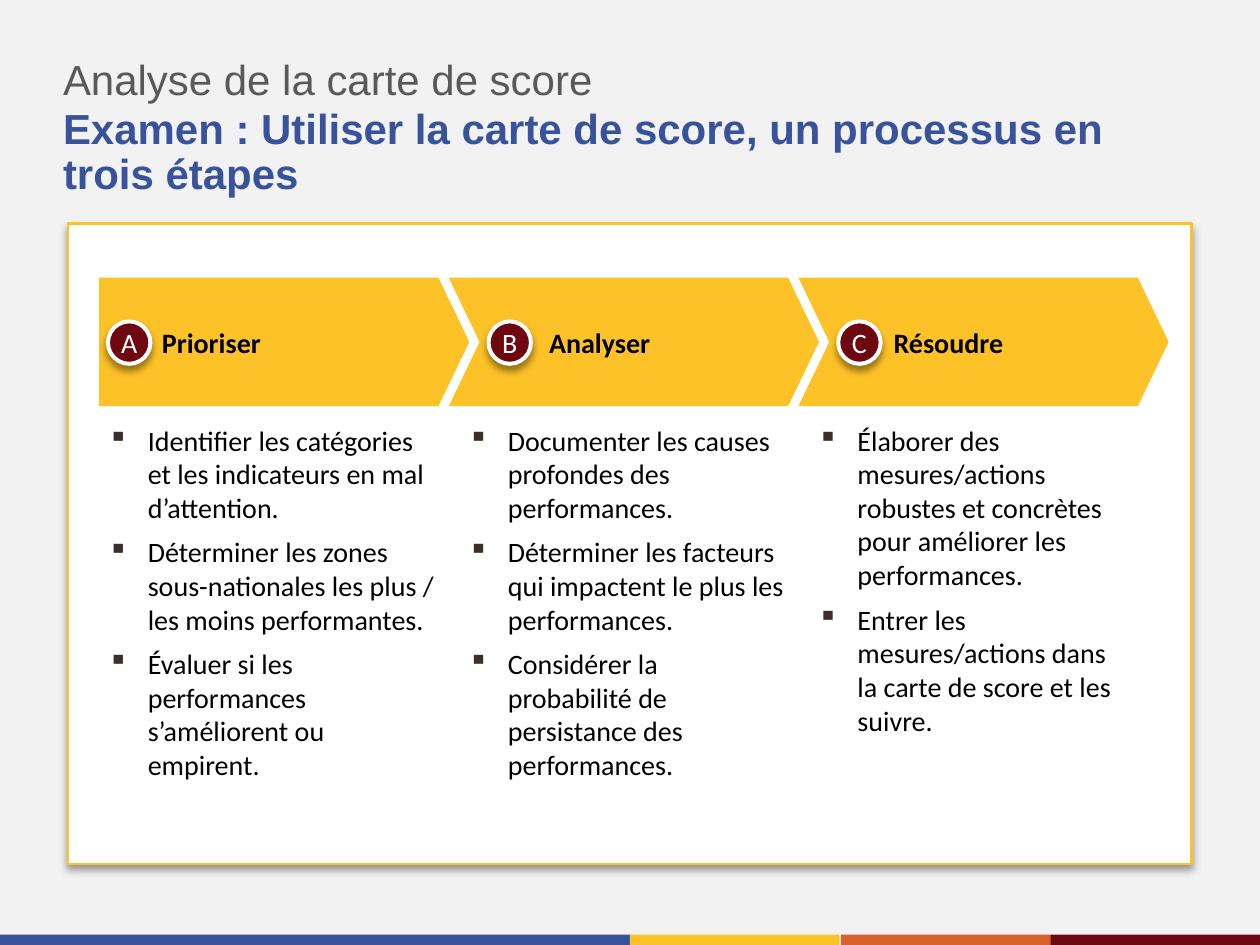
from lxml import etree
from pptx import Presentation
from pptx.dml.color import RGBColor
from pptx.enum.shapes import MSO_SHAPE
from pptx.enum.text import MSO_ANCHOR, PP_ALIGN
from pptx.oxml.ns import qn
from pptx.util import Inches, Pt

RECTANGLE = MSO_SHAPE.RECTANGLE
OVAL = MSO_SHAPE.OVAL
TOP = MSO_ANCHOR.TOP
MIDDLE = MSO_ANCHOR.MIDDLE
LEFT = PP_ALIGN.LEFT
CENTER = PP_ALIGN.CENTER

COLORS = {
    "background": "F2F2F2",
    "blue": "38529C",
    "yellow": "FDC228",
    "orange": "D8602C",
    "maroon": "6F0710",
    "gray": "595959",
    "bullet": "39302A",
    "white": "FFFFFF",
    "black": "000000",
}
HEADING = {"name": "Arial", "size": Pt(23.5)}
TITLE = {**HEADING, "bold": True}
BODY = {"name": "Calibri", "size": Pt(15.7)}
STEP_NAME = {**BODY, "bold": True}

FOOTER_BANDS = [
    ("blue", 0, 4.9),
    ("yellow", 4.9, 1.63),
    ("orange", 6.54, 1.63),
    ("maroon", 8.17, 1.63),
]
STEPS = [
    {
        "letter": "A", "name": "Prioriser", "notch": 0,
        "badge_left": 0.84, "name_left": 1.26, "name_width": 2.2,
        "tasks_left": 0.84, "tasks_width": 2.56,
        "tasks": [
            "Identifier les catégories et les indicateurs en mal d’attention.",
            "Déterminer les zones sous-nationales les plus / les moins performantes.",
            "Évaluer si les performances s’améliorent ou empirent.",
        ],
    },
    {
        "letter": "B", "name": "Analyser", "notch": 0.24,
        "badge_left": 3.8, "name_left": 4.27, "name_width": 1.88,
        "tasks_left": 3.64, "tasks_width": 2.48,
        "tasks": [
            "Documenter les causes profondes des performances.",
            "Déterminer les facteurs qui impactent le plus les performances.",
            "Considérer la probabilité de persistance des performances.",
        ],
    },
    {
        "letter": "C", "name": "Résoudre", "notch": 0.24,
        "badge_left": 6.52, "name_left": 6.95, "name_width": 1.88,
        "tasks_left": 6.36, "tasks_width": 2.44,
        "tasks": [
            "Élaborer des mesures/actions robustes et concrètes pour améliorer les performances.",
            "Entrer les mesures/actions dans la carte de score et les suivre.",
        ],
    },
]
ARROW_LEFT, ARROW_TOP, ARROW_STEP = 0.77, 2.16, 2.72
ARROW_WIDTH, ARROW_HEIGHT, ARROW_TIP = 2.88, 1, 0.24


def rgb(color):
    return RGBColor.from_string(COLORS[color])


def paint(shape, fill, line=None, line_width=0):
    shape.shadow.inherit = False
    shape.fill.solid()
    shape.fill.fore_color.rgb = rgb(fill)
    if line:
        shape.line.color.rgb = rgb(line)
        shape.line.width = Pt(line_width)
    else:
        shape.line.fill.background()


def add_shape(slide, kind, left, top, width, height, fill, line=None, line_width=0):
    shape = slide.shapes.add_shape(
        kind, Inches(left), Inches(top), Inches(width), Inches(height))
    paint(shape, fill, line, line_width)
    return shape


def add_drop_shadow(shape):
    effects = shape._element.spPr.find(qn("a:effectLst"))
    shadow = etree.SubElement(
        effects, qn("a:outerShdw"), blurRad=str(Pt(4)), dist=str(Pt(3)),
        dir="5400000", rotWithShape="0")
    color = etree.SubElement(shadow, qn("a:srgbClr"), val=COLORS["black"])
    etree.SubElement(color, qn("a:alpha"), val="40000")


def add_bullet(paragraph):
    properties = paragraph._p.get_or_add_pPr()
    properties.set("marL", str(Inches(0.31)))
    properties.set("indent", str(Inches(-0.31)))
    color = etree.SubElement(properties, qn("a:buClr"))
    etree.SubElement(color, qn("a:srgbClr"), val=COLORS["bullet"])
    etree.SubElement(properties, qn("a:buChar"), char="▪")


def write(shape, texts, style, color, anchor=TOP, align=LEFT, spacing=1, bullets=False):
    frame = shape.text_frame
    settings = {"word_wrap": True, "vertical_anchor": anchor, "margin_left": 0,
                "margin_right": 0, "margin_top": 0, "margin_bottom": 0}
    for name, value in settings.items():
        setattr(frame, name, value)
    for index, text in enumerate(texts):
        paragraph = frame.add_paragraph() if index else frame.paragraphs[0]
        paragraph.alignment = align
        paragraph.line_spacing = spacing
        if bullets:
            paragraph.space_after = Pt(6)
            add_bullet(paragraph)
        run = paragraph.add_run()
        run.text = text
        run.font.color.rgb = rgb(color)
        for name, value in style.items():
            setattr(run.font, name, value)


def add_text(slide, left, top, width, height, texts, style, color, **layout):
    box = slide.shapes.add_textbox(
        Inches(left), Inches(top), Inches(width), Inches(height))
    write(box, texts, style, color, **layout)


def add_arrow(slide, left, notch):
    right = left + ARROW_WIDTH
    middle = ARROW_TOP + ARROW_HEIGHT / 2
    bottom = ARROW_TOP + ARROW_HEIGHT
    outline = [
        (left, ARROW_TOP), (right - ARROW_TIP, ARROW_TOP), (right, middle),
        (right - ARROW_TIP, bottom), (left, bottom), (left + notch, middle),
    ]
    points = [(Inches(x), Inches(y)) for x, y in outline]
    builder = slide.shapes.build_freeform(*points[0])
    builder.add_line_segments(points[1:], close=True)
    paint(builder.convert_to_shape(), "yellow")


def add_badge(slide, left, letter):
    badge = add_shape(slide, OVAL, left, 2.5, 0.33, 0.33, "maroon", "white", 2.25)
    add_drop_shadow(badge)
    write(badge, [letter], BODY, "white", anchor=MIDDLE, align=CENTER)
    badge.text_frame.word_wrap = False


def add_step(slide, index, step):
    add_arrow(slide, ARROW_LEFT + index * ARROW_STEP, step["notch"])
    add_text(slide, step["name_left"], 2.53, step["name_width"], 0.26,
             [step["name"]], STEP_NAME, "black", anchor=MIDDLE)
    add_text(slide, step["tasks_left"], 3.29, step["tasks_width"], 3.07,
             step["tasks"], BODY, "black", bullets=True)
    add_badge(slide, step["badge_left"], step["letter"])


def main():
    deck = Presentation()
    deck.slide_width, deck.slide_height = Inches(9.8), Inches(7.35)
    slide = deck.slides.add_slide(deck.slide_layouts[6])
    slide.background.fill.solid()
    slide.background.fill.fore_color.rgb = rgb("background")

    for color, left, width in FOOTER_BANDS:
        add_shape(slide, RECTANGLE, left, 7.27, width, 0.08, color)
    add_text(slide, 0.49, 0.84, 8.82, 0.71,
             ["Examen : Utiliser la carte de score, un processus en trois étapes"],
             TITLE, "blue", spacing=0.9)
    add_text(slide, 0.49, 0.46, 8.82, 0.36, ["Analyse de la carte de score"],
             HEADING, "gray", spacing=0.9)

    panel = add_shape(slide, RECTANGLE, 0.53, 1.74, 8.74, 4.98, "white", "yellow", 1.5)
    add_drop_shadow(panel)
    for index, step in enumerate(STEPS):
        add_step(slide, index, step)
    deck.save("out.pptx")


if __name__ == "__main__":
    main()
